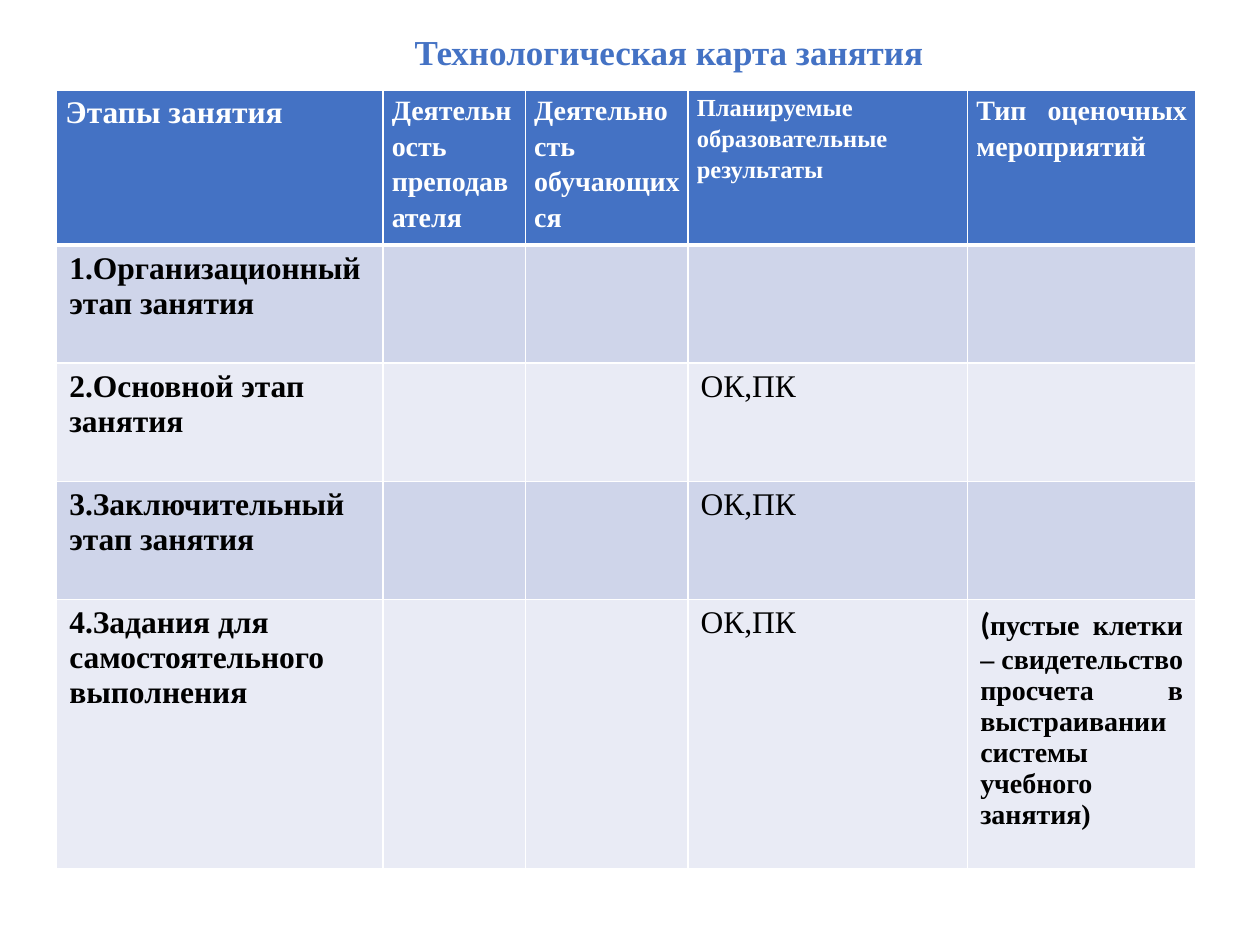
"""Build a slide with the stage-by-stage plan of a lesson."""
from pptx import Presentation
from pptx.dml.color import RGBColor
from pptx.enum.text import MSO_ANCHOR, MSO_AUTO_SIZE, PP_ALIGN as Align
from pptx.oxml.ns import qn
from pptx.util import Pt
from lxml.etree import SubElement

SERIF = "Times New Roman"
BLUE, WHITE, BLACK = "4472C4", "FFFFFF", "000000"
BANDS = ["CFD5EA", "E9EBF5"]


def add_run(paragraph, text, size, color, bold=True, font=SERIF):
    run = paragraph.add_run()
    run.text = text
    run.font.name = font
    run.font.size = Pt(size)
    run.font.bold = bold
    run.font.color.rgb = RGBColor.from_string(color)


def style_cell(cell, fill, top, bottom):
    properties = cell._tc.get_or_add_tcPr()
    for side, width in [("L", 1), ("R", 1), ("T", top), ("B", bottom)]:
        line = SubElement(properties, qn("a:ln" + side), w=str(Pt(width)))
        SubElement(SubElement(line, qn("a:solidFill")), qn("a:srgbClr"), val=WHITE)
    cell.fill.solid()
    cell.fill.fore_color.rgb = RGBColor.from_string(fill)


presentation = Presentation()
presentation.slide_width, presentation.slide_height = Pt(720), Pt(540)
slide = presentation.slides.add_slide(presentation.slide_layouts[5])

title = slide.shapes.title
title.left, title.top, title.width, title.height = Pt(229.7), Pt(13.7), Pt(307.4), Pt(31.7)
frame = title.text_frame
frame.word_wrap = False
frame.auto_size = MSO_AUTO_SIZE.SHAPE_TO_FIT_TEXT
frame.vertical_anchor = MSO_ANCHOR.TOP
frame.paragraphs[0].alignment = Align.LEFT
add_run(frame.paragraphs[0], "Технологическая карта занятия", 20, BLUE)

column_widths = [186.5, 81.4, 92.9, 159.8, 130.3]
row_heights = [87.5, 67.5, 67.5, 67.5, 154]
table = slide.shapes.add_table(
    len(row_heights), len(column_widths), Pt(32.4), Pt(51.8),
    Pt(sum(column_widths)), Pt(sum(row_heights))).table
for column, width in zip(table.columns, column_widths):
    column.width = Pt(width)
for index, (row, height) in enumerate(zip(table.rows, row_heights)):
    row.height = Pt(height)
    for cell in row.cells:
        style_cell(cell, BANDS[(index - 1) % 2] if index else BLUE,
                   3 if index == 1 else 1, 1 if index else 3)

headers = [
    (["Этапы занятия"], 18),
    (["Деятельность", "преподавателя "], 16),
    (["Деятельность обучающихся"], 16),
    (["Планируемые образовательные результаты"], 14),
    (["Тип оценочных мероприятий"], 16),
]
for cell, (lines, size) in zip(table.rows[0].cells, headers):
    cell.margin_left = cell.margin_right = Pt(5)
    cell.margin_top = cell.margin_bottom = Pt(0)
    for number, text in enumerate(lines):
        frame = cell.text_frame
        paragraph = frame.add_paragraph() if number else frame.paragraphs[0]
        paragraph.alignment = Align.JUSTIFY
        paragraph.line_spacing = 1.15
        add_run(paragraph, text, size, WHITE)

stages = [
    ("1.Организационный этап занятия", ""),
    ("2.Основной этап занятия", "ОК,ПК"),
    ("3.Заключительный этап занятия", "ОК,ПК"),
    ("4.Задания для самостоятельного выполнения", "ОК,ПК"),
]
for index, (stage, results) in enumerate(stages, start=1):
    add_run(table.cell(index, 0).text_frame.paragraphs[0], stage, 18, BLACK)
    if results:
        add_run(table.cell(index, 3).text_frame.paragraphs[0], results, 18, BLACK, bold=False)

remark = table.cell(4, 4).text_frame.paragraphs[0]
remark.alignment = Align.JUSTIFY
add_run(remark, "(", 18, BLACK, font="Calibri")
add_run(remark, "пустые клетки – свидетельство просчета в выстраивании системы учебного занятия)",
        16, BLACK)

presentation.save("out.pptx")
